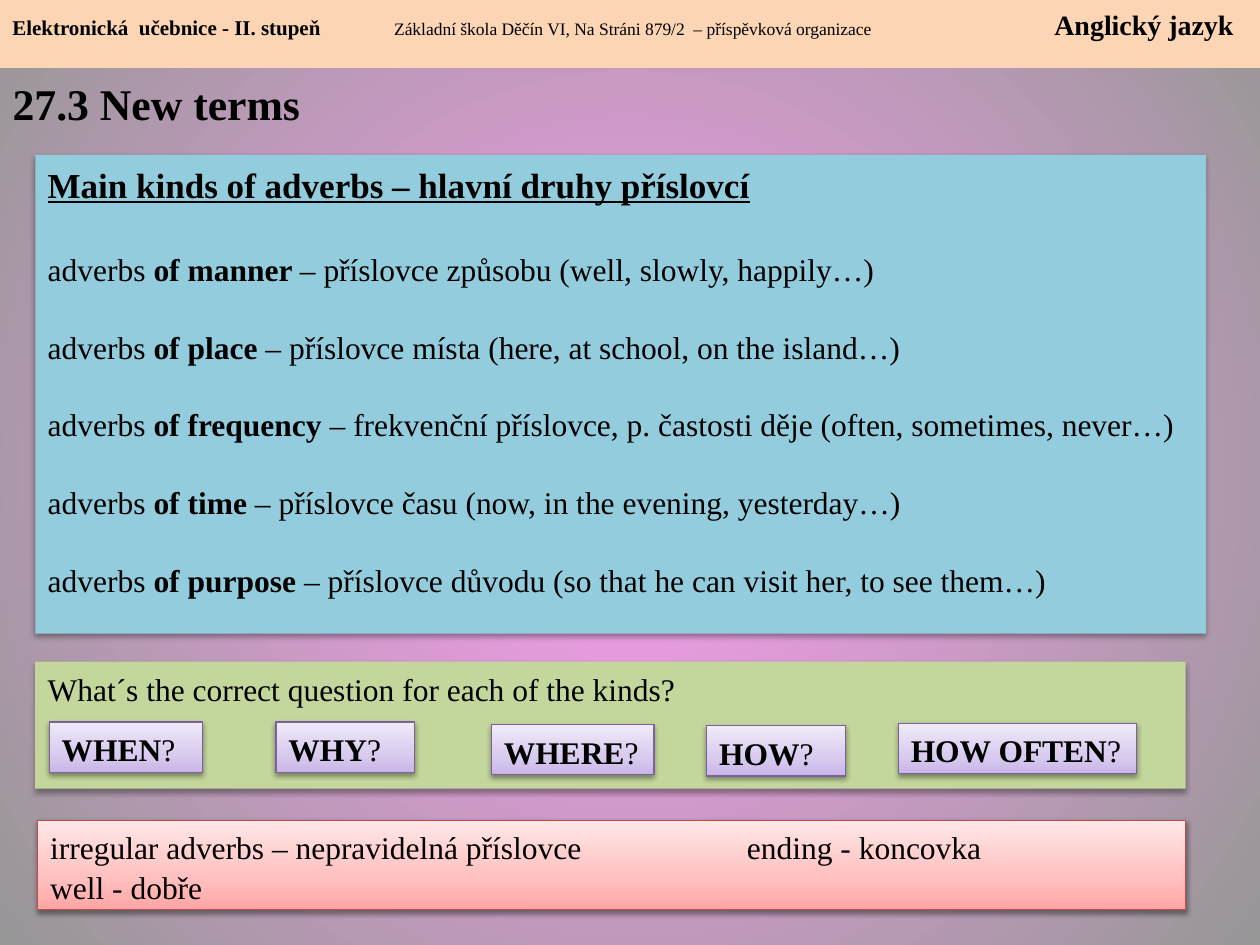
from dataclasses import dataclass
from typing import Optional

from pptx import Presentation
from pptx.dml.color import RGBColor
from pptx.enum.shapes import MSO_SHAPE as Shape
from pptx.enum.text import MSO_ANCHOR as Anchor, PP_ALIGN as Align
from pptx.oxml import parse_xml
from pptx.oxml.ns import nsdecls, qn
from pptx.util import Inches, Pt

COLUMNS, ROWS = 100, 75
FONT = "Times New Roman"
BODY_SIZE = 18
LINE_SPACING = 1.05


@dataclass(frozen=True)
class Run:
    text: str
    bold: Optional[bool] = None
    size: Optional[float] = None


@dataclass(frozen=True)
class Line:
    runs: tuple[Run, ...]
    size: float = BODY_SIZE
    before: float = 0
    bold: bool = False
    underline: bool = False
    tabs: tuple[float, ...] = ()


@dataclass(frozen=True)
class Box:
    """A rectangle placed in grid columns and rows."""
    left: float
    top: float
    width: float
    height: float
    fill: tuple[str, ...]
    border: Optional[str] = None
    shadow: Optional[tuple[float, float]] = None  # opacity in %, distance in pt


def colour(value: str) -> RGBColor:
    return RGBColor.from_string(value)


def set_gradient(owner, fill, stops: dict[int, str], direction: str) -> None:
    fill.gradient()
    gradient = next(owner.iter(qn("a:gradFill")))
    marks = "".join(
        f'<a:gs pos="{pos * 1000}"><a:srgbClr val="{value}"/></a:gs>'
        for pos, value in stops.items())
    new = parse_xml(f'<a:gradFill {nsdecls("a")} rotWithShape="1">'
                    f'<a:gsLst>{marks}</a:gsLst>{direction}</a:gradFill>')
    gradient.getparent().replace(gradient, new)


def set_shadow(shape, opacity: float, distance: float) -> None:
    effects = shape.element.spPr.find(qn("a:effectLst"))
    effects.append(parse_xml(
        f'<a:outerShdw {nsdecls("a")} blurRad="{Pt(3.1)}" dist="{Pt(distance)}" '
        f'dir="5400000" rotWithShape="0"><a:srgbClr val="000000">'
        f'<a:alpha val="{opacity * 1000}"/></a:srgbClr></a:outerShdw>'))


def write(frame, lines: list[Line]) -> None:
    frame.word_wrap = True
    frame.vertical_anchor = Anchor.TOP
    for index, line in enumerate(lines):
        paragraph = frame.add_paragraph() if index else frame.paragraphs[0]
        if line.tabs:
            stops = "".join(f'<a:tab pos="{Inches(tab / 10)}" algn="l"/>'
                            for tab in line.tabs)
            paragraph._p.get_or_add_pPr().append(
                parse_xml(f'<a:tabLst {nsdecls("a")}>{stops}</a:tabLst>'))
        paragraph.alignment = Align.LEFT
        paragraph.line_spacing = LINE_SPACING
        paragraph.space_before = Pt(line.before)
        font = paragraph.font
        font.name, font.size = FONT, Pt(line.size)
        font.bold, font.underline = line.bold, line.underline
        font.color.rgb = colour("000000")
        for part in line.runs:
            run = paragraph.add_run()
            run.text = part.text
            if part.bold is not None:
                run.font.bold = part.bold
            if part.size:
                run.font.size = Pt(part.size)


def draw(slide, box: Box, lines: list[Line]) -> None:
    shape = slide.shapes.add_shape(
        Shape.RECTANGLE, slide_width * box.left / COLUMNS,
        slide_height * box.top / ROWS, slide_width * box.width / COLUMNS,
        slide_height * box.height / ROWS)
    shape.shadow.inherit = False
    if len(box.fill) == 1:
        shape.fill.solid()
        shape.fill.fore_color.rgb = colour(box.fill[0])
    else:
        set_gradient(shape.element, shape.fill, dict(zip((0, 35, 100), box.fill)),
                     '<a:lin ang="16200000" scaled="1"/>')
    if box.border:
        shape.line.color.rgb = colour(box.border)
        shape.line.width = Pt(0.75)
    else:
        shape.line.fill.background()
    if box.shadow:
        set_shadow(shape, *box.shadow)
    write(shape.text_frame, lines)


FLAT_SHADOW, RAISED_SHADOW = (35, 1.8), (38, 1.6)
HEADER = Box(0, 0, 100, 5.4, ("FCD5B5",))
VOCABULARY = Box(3, 65.1, 91.1, 7.1, ("FFA6A5", "FFC0BF", "FFE7E7"),
                 "BF4C48", RAISED_SHADOW)
KINDS = Box(2.8, 12.3, 92.9, 38, ("93CDDD",), shadow=FLAT_SHADOW)
QUESTIONS = Box(2.8, 52.5, 91.3, 10.1, ("C3D69B",), shadow=FLAT_SHADOW)

ADVERBS = [
    ("of manner", "příslovce způsobu (well, slowly, happily…)"),
    ("of place", "příslovce místa (here, at school, on the island…)"),
    ("of frequency", "frekvenční příslovce, p. častosti děje (often, sometimes, never…)"),
    ("of time", "příslovce času (now, in the evening, yesterday…)"),
    ("of purpose", "příslovce důvodu (so that he can visit her, to see them…)"),
]
# question word, left column, top row, width in columns
ANSWERS = [
    ("WHEN", 3.9, 57.3, 12.2),
    ("WHY", 21.9, 57.3, 11),
    ("WHERE", 39, 57.5, 12.9),
    ("HOW", 56.1, 57.6, 11),
    ("HOW OFTEN", 71.3, 57.4, 18.9),
]

presentation = Presentation()
slide_width = presentation.slide_width = Inches(10)
slide_height = presentation.slide_height = Inches(7.5)
slide = presentation.slides.add_slide(presentation.slide_layouts[5])
set_gradient(slide.element, slide.background.fill, {0: "FA9CEF", 100: "979797"},
             '<a:path path="circle"><a:fillToRect l="50000" t="50000" '
             'r="50000" b="50000"/></a:path>')

title = slide.shapes.title
title.left, title.top = 0, Inches(0.54)
title.width, title.height = slide_width, Inches(6.96)
write(title.text_frame, [Line((Run("27.3 New terms"),), 25, bold=True)])

draw(slide, HEADER, [Line((
    Run("Elektronická  učebnice - II. stupeň\t", True, 12),
    Run("Základní škola Děčín VI, Na Stráni 879/2  – příspěvková organizace\t", False, 10),
    Run("Anglický jazyk", True, 16)), tabs=(30.3, 82.7))])
draw(slide, VOCABULARY, [
    Line((Run("irregular adverbs – nepravidelná příslovce\tending - koncovka"),),
         tabs=(55.3,)),
    Line((Run("well - dobře"),))])

heading = Line((Run("Main kinds of adverbs – hlavní druhy příslovcí"),), 20,
               bold=True, underline=True)
draw(slide, KINDS, [heading] + [
    Line((Run("adverbs "), Run(f"{kind} ", True), Run(f"– {meaning}")),
         before=21.7 if index else 24.5)
    for index, (kind, meaning) in enumerate(ADVERBS)])

draw(slide, QUESTIONS, [
    Line((Run("What´s the correct question for each of the kinds?"),))])
for word, left, top, width in ANSWERS:
    chip = Box(left, top, width, 4, ("C9B5E8", "D8CBEE", "F0EAF9"),
               "7D60A0", RAISED_SHADOW)
    draw(slide, chip, [Line((Run(word, True), Run("?")))])

presentation.save("out.pptx")
